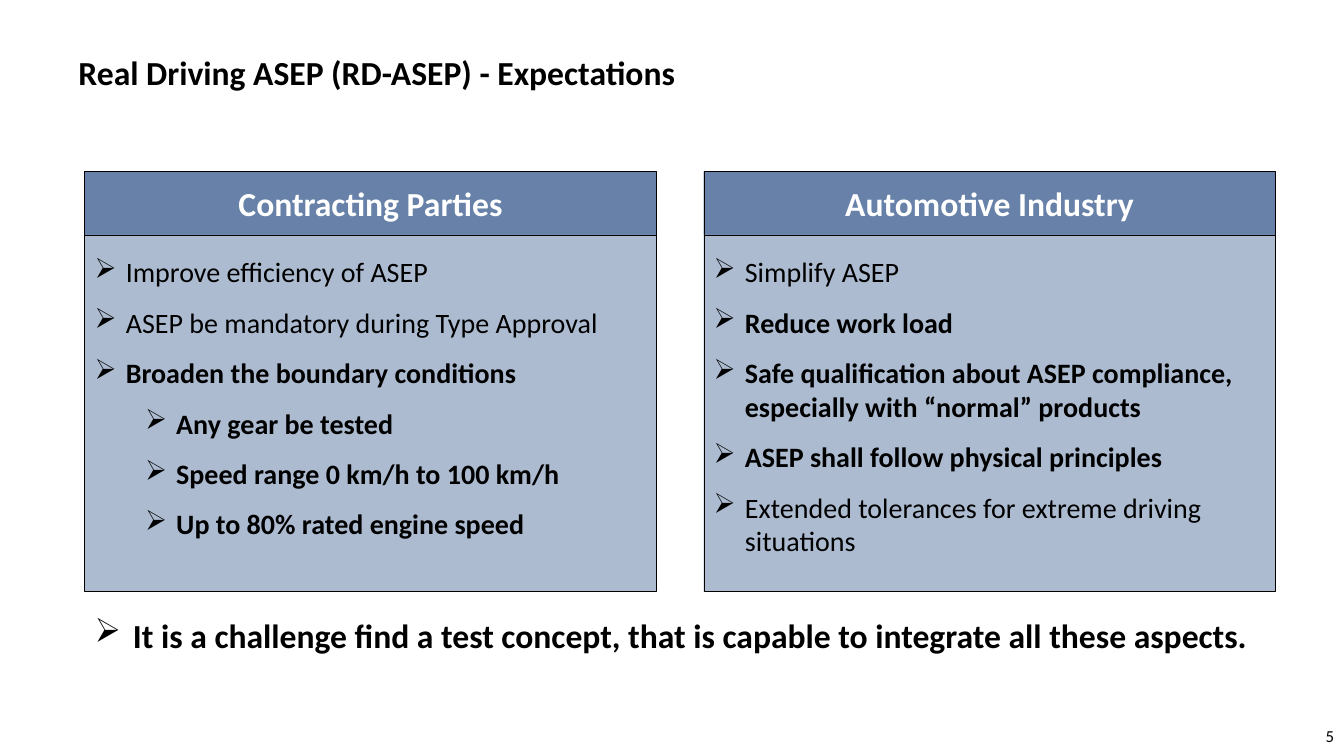
from lxml.etree import SubElement
from pptx import Presentation
from pptx.dml.color import RGBColor
from pptx.enum.shapes import MSO_SHAPE
from pptx.enum.text import MSO_ANCHOR, MSO_AUTO_SIZE, PP_ALIGN
from pptx.oxml.ns import qn
from pptx.util import Inches, Pt

# Content: each point is (text, level, bold)
TITLE = "Real Driving ASEP (RD-ASEP) - Expectations"
PANELS = [
    ("Contracting Parties", [
        ("Improve efficiency of ASEP", 0, False),
        ("ASEP be mandatory during Type Approval", 0, False),
        ("Broaden the boundary conditions", 0, True),
        ("Any gear be tested", 1, True),
        ("Speed range 0 km/h to 100 km/h", 1, True),
        ("Up to 80% rated engine speed", 1, True),
    ]),
    ("Automotive Industry", [
        ("Simplify ASEP", 0, False),
        ("Reduce work load", 0, True),
        ("Safe qualification about ASEP compliance, especially with “normal” products", 0, True),
        ("ASEP shall follow physical principles", 0, True),
        ("Extended tolerances for extreme driving situations", 0, False),
    ]),
]
CONCLUSION = "It is a challenge find a test concept, that is capable to integrate all these aspects."
PAGE_NUMBER = "5"

# Format values
BLACK = RGBColor(0x00, 0x00, 0x00)
WHITE = RGBColor(0xFF, 0xFF, 0xFF)
HEADER_BLUE = RGBColor(0x67, 0x81, 0xA8)
BODY_BLUE = RGBColor(0xAC, 0xBB, 0xD0)
HEADING = {"name": "Calibri", "size": Pt(24), "bold": True}
POINT = {"name": "Calibri", "size": Pt(20)}
FOOTER = {"name": "Calibri", "size": Pt(12), "bold": False}

# Layout in inches
PANEL_LEFT, PANEL_TOP = 0.84, 1.7
PANEL_WIDTH, PANEL_GAP = 5.67, 0.47
HEADER_HEIGHT, BODY_HEIGHT = 0.63, 3.54
LEVEL_STEP = 0.5


def write(paragraph, text, font_values, color=BLACK, align=PP_ALIGN.LEFT):
    paragraph.alignment = align
    run = paragraph.add_run()
    run.text = text
    for key, value in font_values.items():
        setattr(run.font, key, value)
    run.font.color.rgb = color


def add_bullet(paragraph, hang, level=0):
    paragraph.level = level
    properties = paragraph._p.get_or_add_pPr()
    properties.set("marL", str(Inches(hang + level * LEVEL_STEP)))
    properties.set("indent", str(-Inches(hang)))
    SubElement(properties, qn("a:buChar")).set("char", "➢")


def add_label(slide, left, top, width, height):
    label = slide.shapes.add_textbox(Inches(left), Inches(top), Inches(width), Inches(height))
    label.text_frame.word_wrap = True
    return label.text_frame


def add_block(slide, left, top, height, fill):
    block = slide.shapes.add_shape(MSO_SHAPE.ROUNDED_RECTANGLE, Inches(left), Inches(top),
                                   Inches(PANEL_WIDTH), Inches(height))
    block.adjustments[0] = 0
    block.shadow.inherit = False
    block.fill.solid()
    block.fill.fore_color.rgb = fill
    block.line.color.rgb = BLACK
    block.line.width = Pt(0.25)
    block.text_frame.word_wrap = True
    return block.text_frame


def add_panel(slide, left, heading, points):
    header = add_block(slide, left, PANEL_TOP, HEADER_HEIGHT, HEADER_BLUE)
    header.vertical_anchor = MSO_ANCHOR.MIDDLE
    write(header.paragraphs[0], heading, HEADING, WHITE, PP_ALIGN.CENTER)

    body = add_block(slide, left, PANEL_TOP + HEADER_HEIGHT, BODY_HEIGHT, BODY_BLUE)
    body.vertical_anchor = MSO_ANCHOR.TOP
    body.margin_top = Inches(0.2)
    for index, (text, level, bold) in enumerate(points):
        paragraph = body.add_paragraph() if index else body.paragraphs[0]
        paragraph.space_before = Pt(12)
        add_bullet(paragraph, 0.31, level)
        write(paragraph, text, POINT | {"bold": bold})


def main():
    presentation = Presentation()
    presentation.slide_width = Inches(13.33)
    presentation.slide_height = Inches(7.5)
    slide = presentation.slides.add_slide(presentation.slide_layouts[6])

    # Title
    title = add_label(slide, 0.68, 0.47, 10.16, 0.5)
    title.auto_size = MSO_AUTO_SIZE.SHAPE_TO_FIT_TEXT
    write(title.paragraphs[0], TITLE, HEADING)

    # Conclusion
    conclusion = add_label(slide, PANEL_LEFT, 6.05, 2 * PANEL_WIDTH + PANEL_GAP, 0.5)
    conclusion.auto_size = MSO_AUTO_SIZE.SHAPE_TO_FIT_TEXT
    conclusion.paragraphs[0].space_before = Pt(6)
    add_bullet(conclusion.paragraphs[0], 0.38)
    write(conclusion.paragraphs[0], CONCLUSION, HEADING)

    # Panels side by side
    for column, (heading, points) in enumerate(PANELS):
        add_panel(slide, PANEL_LEFT + column * (PANEL_WIDTH + PANEL_GAP), heading, points)

    # Page number
    page_number = add_label(slide, 10.33, 7.1, 3, 0.4)
    page_number.vertical_anchor = MSO_ANCHOR.MIDDLE
    write(page_number.paragraphs[0], PAGE_NUMBER, FOOTER, align=PP_ALIGN.RIGHT)

    presentation.save("out.pptx")


if __name__ == "__main__":
    main()
